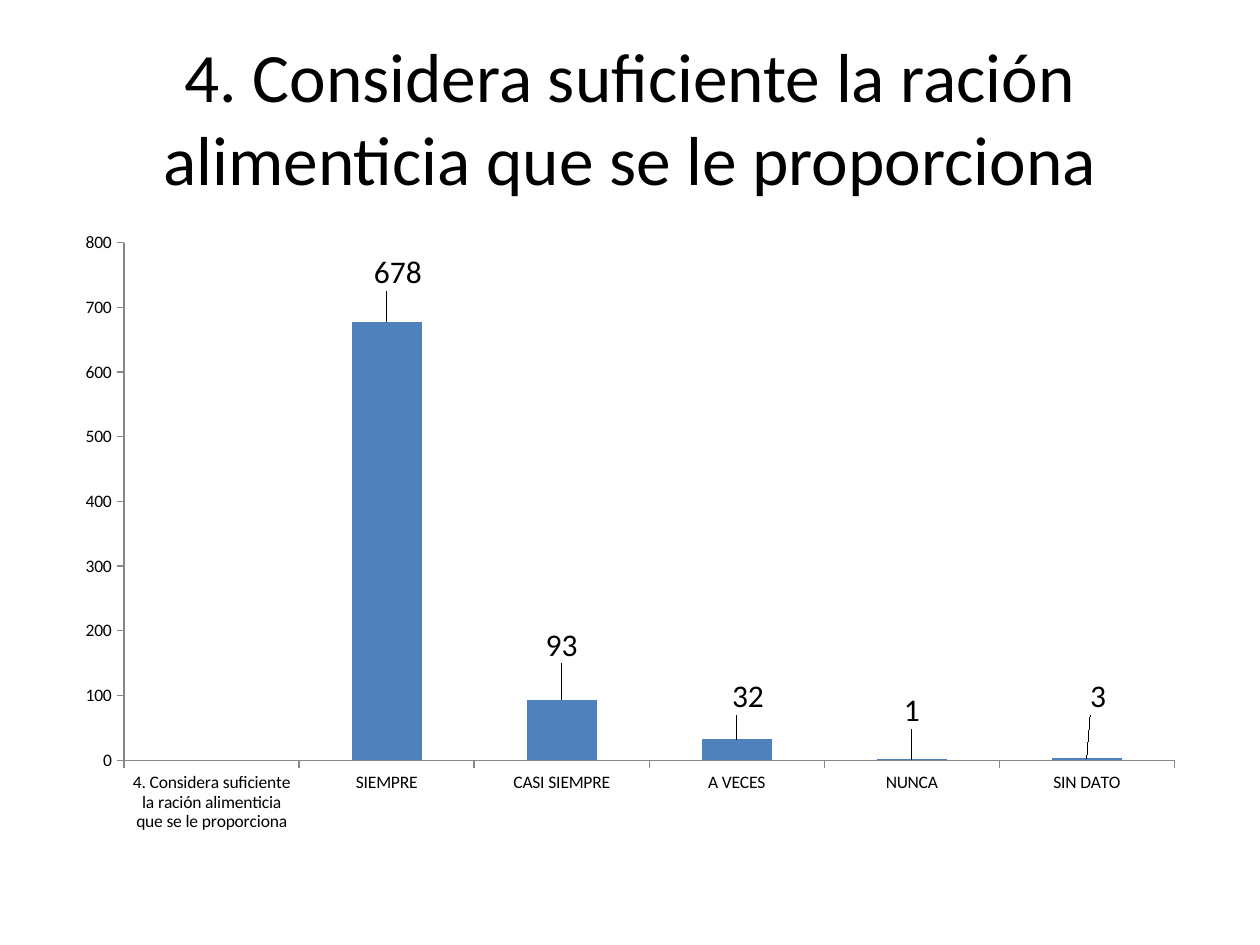
from lxml import etree
from pptx import Presentation
from pptx import util as u
from pptx.chart import data as cd
from pptx.dml.color import RGBColor
from pptx.enum import chart as ch, text
from pptx.oxml import ns

BLACK = RGBColor(0x00, 0x00, 0x00)
BLUE = RGBColor(0x4F, 0x81, 0xBD)
GRAY = RGBColor(0x86, 0x86, 0x86)

QUESTION = "4. Considera suficiente la ración alimenticia que se le proporciona"
ANSWERS = {QUESTION: None, "SIEMPRE": 678, "CASI SIEMPRE": 93,
           "A VECES": 32, "NUNCA": 1, "SIN DATO": 3}
LABEL_SHIFTS = {1: (0.01, -0.04), 2: (0, -0.05), 3: (0.01, -0.03),
                4: (0, -0.04), 5: (0.01, -0.06)}


class SurveySlide:
    """Holds the style and the current slide, and adds its elements."""

    font = "Calibri"

    def __init__(self, prs):
        self.s = prs.slides.add_slide(prs.slide_layouts[6])

    def style(self, font, size):
        font.name, font.size = self.font, u.Pt(size)
        font.bold = False
        font.color.rgb = BLACK

    def title(self, words, *box):
        tf = self.s.shapes.add_textbox(*map(u.Inches, box)).text_frame
        tf.word_wrap = True
        tf.vertical_anchor = text.MSO_ANCHOR.MIDDLE
        p = tf.paragraphs[0]
        p.text = words
        p.alignment = text.PP_ALIGN.CENTER
        self.style(p.runs[0].font, 39.6)

    def columns(self, answers, shifts, *box):
        data = cd.CategoryChartData()
        data.categories = list(answers)
        data.add_series("Series 1", list(answers.values()))
        chart = self.s.shapes.add_chart(
            ch.XL_CHART_TYPE.COLUMN_CLUSTERED, *map(u.Inches, box), data).chart
        chart.has_legend = chart.has_title = False
        self.style(chart.font, 10)
        for axis in (chart.category_axis, chart.value_axis):
            axis.has_major_gridlines = False
            axis.major_tick_mark = ch.XL_TICK_MARK.OUTSIDE
            axis.format.line.color.rgb = GRAY
        chart.value_axis.minimum_scale = 0
        chart.value_axis.maximum_scale = 800
        chart.value_axis.major_unit = 100
        plot = chart.plots[0]
        plot.gap_width = 150
        plot.vary_by_categories = False
        series = plot.series[0]
        series.format.fill.solid()
        series.format.fill.fore_color.rgb = BLUE
        self.labels(series, shifts)

    def labels(self, series, shifts):
        labels = series.data_labels
        labels.show_value = True
        self.style(labels.font, 18)
        for i in shifts:
            label = series.points[i].data_label
            self.style(label.font, 18)
            label.position = ch.XL_LABEL_POSITION.OUTSIDE_END
        for item, shift in zip(series._element.xpath(".//c:dLbl"), shifts.values()):
            layout = etree.Element(ns.qn("c:layout"))
            manual = etree.SubElement(layout, ns.qn("c:manualLayout"))
            for axis, value in zip("xy", shift):
                etree.SubElement(manual, ns.qn(f"c:{axis}"), val=str(value))
            item.insert(1, layout)


def main():
    prs = Presentation()
    prs.slide_width, prs.slide_height = u.Inches(10), u.Inches(7.5)
    s = SurveySlide(prs)
    s.title(QUESTION, 0.5, 0.3, 9, 1.25)
    s.columns(ANSWERS, LABEL_SHIFTS, 0.5, 1.75, 9, 4.95)
    prs.save("out.pptx")


if __name__ == "__main__":
    main()
